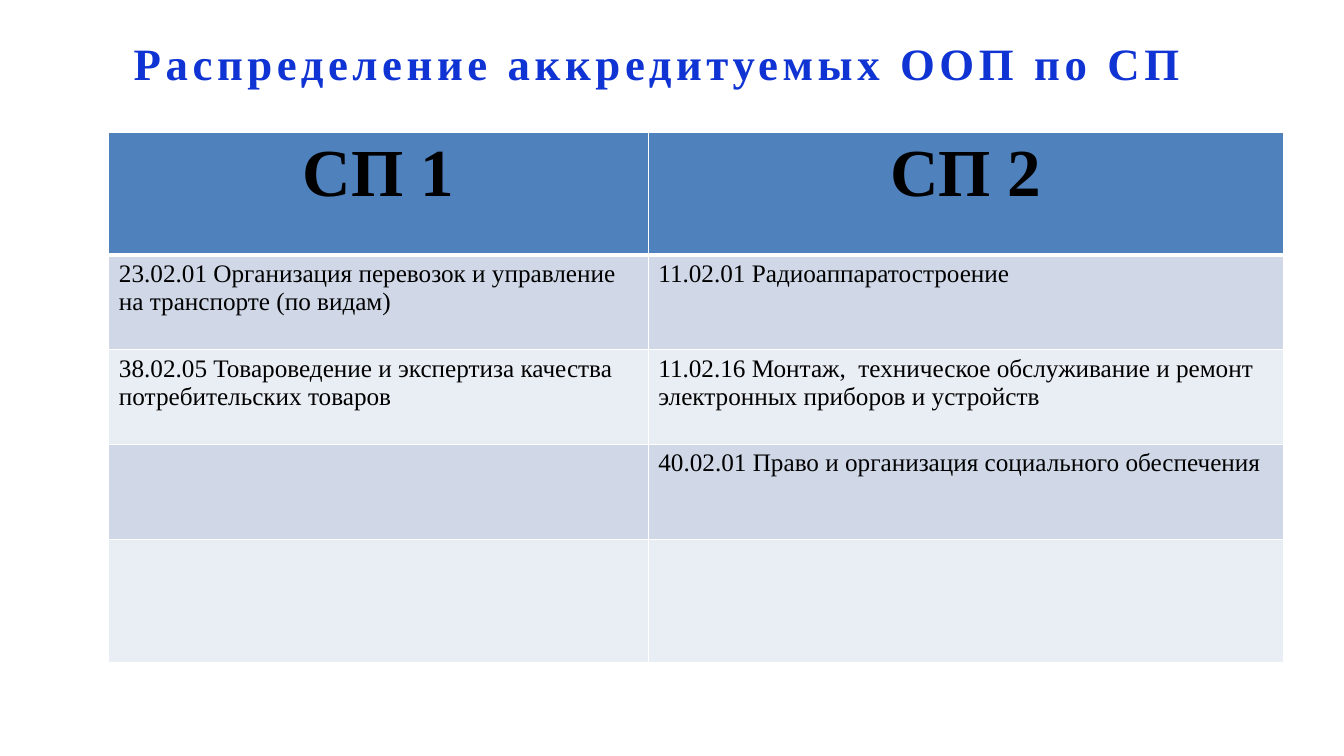
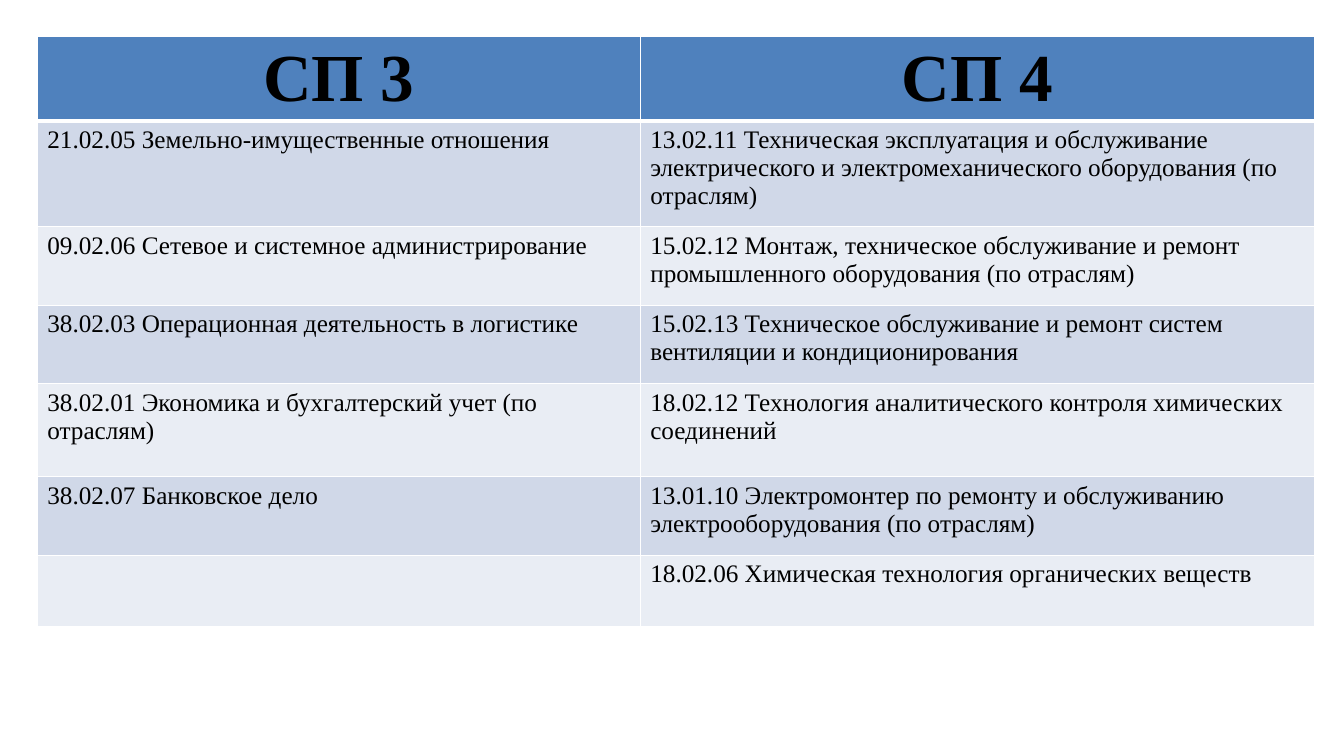
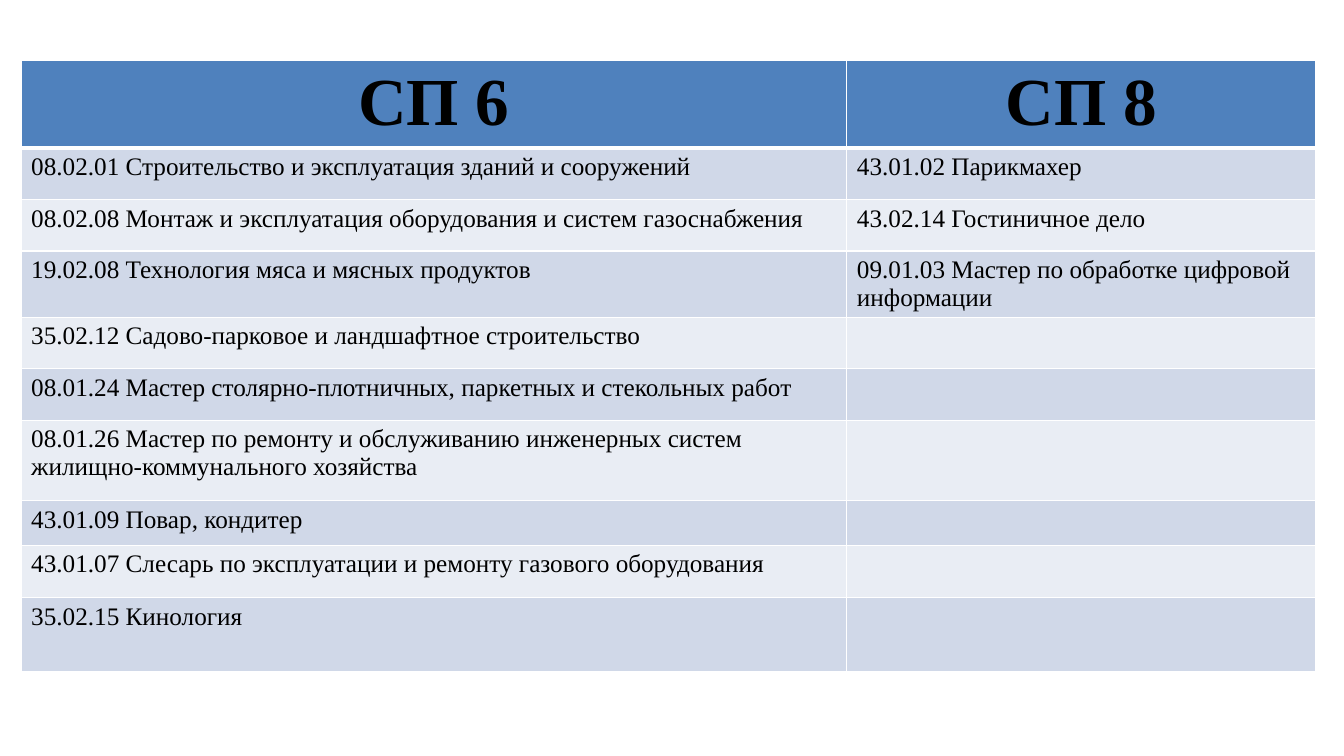
from itertools import zip_longest

from lxml.etree import SubElement
from pptx import Presentation
from pptx.dml.color import RGBColor
from pptx.enum.text import MSO_ANCHOR, MSO_AUTO_SIZE, PP_ALIGN
from pptx.oxml.ns import qn
from pptx.util import Inches, Pt

BLACK = RGBColor(0x00, 0x00, 0x00)
WHITE = RGBColor(0xFF, 0xFF, 0xFF)
TITLE_BLUE = RGBColor(0x0F, 0x34, 0xD3)
HEADER_BLUE = RGBColor(0x4F, 0x81, 0xBD)
BAND_DARK = RGBColor(0xD0, 0xD8, 0xE8)
BAND_LIGHT = RGBColor(0xE9, 0xED, 0xF4)
FONT_NAME = "Times New Roman"
TITLE_ONLY, BLANK = 5, 6

PROGRAM_TABLES = [
    {
        "title": "Распределение аккредитуемых ООП по СП",
        "position": (1.08, 1.31),
        "column_widths": (5.35, 6.3),
        "row_heights": (1.22, 0.94, 0.94, 0.94, 1.22),
        "divisions": {
            "СП 1": [
                "23.02.01 Организация перевозок и управление на транспорте (по видам)",
                "38.02.05 Товароведение и экспертиза качества потребительских товаров",
            ],
            "СП 2": [
                "11.02.01 Радиоаппаратостроение",
                "11.02.16 Монтаж,  техническое обслуживание и ремонт электронных приборов и устройств",
                "40.02.01 Право и организация социального обеспечения",
            ],
        },
    },
    {
        "position": (0.37, 0.36),
        "column_widths": (5.98, 6.69),
        "row_heights": (0.83, 1.05, 0.78, 0.78, 0.92, 0.78, 0.71),
        "divisions": {
            "СП 3": [
                "21.02.05 Земельно-имущественные отношения",
                "09.02.06 Сетевое и системное администрирование",
                "38.02.03 Операционная деятельность в логистике",
                "38.02.01 Экономика и бухгалтерский учет (по отраслям)",
                "38.02.07 Банковское дело",
            ],
            "СП 4": [
                "13.02.11 Техническая эксплуатация и обслуживание электрического "
                "и электромеханического оборудования (по отраслям)",
                "15.02.12 Монтаж, техническое обслуживание и ремонт "
                "промышленного оборудования (по отраслям)",
                "15.02.13 Техническое обслуживание и ремонт систем вентиляции и кондиционирования",
                "18.02.12 Технология аналитического контроля химических соединений",
                "13.01.10 Электромонтер по ремонту и обслуживанию электрооборудования (по отраслям)",
                "18.02.06 Химическая технология органических веществ",
            ],
        },
    },
    {
        "position": (0.21, 0.6),
        "column_widths": (8.19, 4.65),
        "row_heights": (0.87, 0.51, 0.51, 0.66, 0.51, 0.51, 0.8, 0.44, 0.52, 0.73),
        "divisions": {
            "СП 6": [
                "08.02.01 Строительство и эксплуатация зданий и сооружений",
                "08.02.08 Монтаж и эксплуатация оборудования и систем газоснабжения",
                "19.02.08 Технология мяса и мясных продуктов",
                "35.02.12 Садово-парковое и ландшафтное строительство",
                "08.01.24 Мастер столярно-плотничных, паркетных и стекольных работ",
                "08.01.26 Мастер по ремонту и обслуживанию инженерных систем "
                "жилищно-коммунального хозяйства",
                "43.01.09 Повар, кондитер",
                "43.01.07 Слесарь по эксплуатации и ремонту газового оборудования",
                "35.02.15 Кинология",
            ],
            "СП 8": [
                "43.01.02 Парикмахер",
                "43.02.14 Гостиничное дело",
                "09.01.03 Мастер по обработке цифровой информации",
            ],
        },
    },
]


def format_paragraph(paragraph, size, color, bold, alignment):
    paragraph.alignment = alignment
    paragraph.font.name = FONT_NAME
    paragraph.font.size = Pt(size)
    paragraph.font.color.rgb = color
    paragraph.font.bold = bold


def place_title(title, text, left, top, width, height):
    title.left, title.top = Inches(left), Inches(top)
    title.width, title.height = Inches(width), Inches(height)
    frame = title.text_frame
    frame.text = text
    frame.word_wrap = True
    frame.auto_size = MSO_AUTO_SIZE.NONE
    frame.vertical_anchor = MSO_ANCHOR.TOP
    paragraph = frame.paragraphs[0]
    format_paragraph(paragraph, 32, TITLE_BLUE, True, PP_ALIGN.CENTER)
    paragraph.runs[0]._r.get_or_add_rPr().set("spc", "330")


def set_borders(cell, top, bottom):
    properties = cell._tc.get_or_add_tcPr()
    for side, width in (("L", 1), ("R", 1), ("T", top), ("B", bottom)):
        line = SubElement(properties, qn(f"a:ln{side}"), w=str(Pt(width)))
        fill = SubElement(line, qn("a:solidFill"))
        SubElement(fill, qn("a:srgbClr"), val=str(WHITE))


def format_cell(cell, text, row_index):
    is_header = row_index == 0
    set_borders(cell, 3 if row_index == 1 else 1, 3 if is_header else 1)
    cell.fill.solid()
    if is_header:
        cell.fill.fore_color.rgb = HEADER_BLUE
    else:
        cell.fill.fore_color.rgb = BAND_DARK if row_index % 2 else BAND_LIGHT
    if text:
        cell.text = text
        format_paragraph(
            cell.text_frame.paragraphs[0],
            48 if is_header else 18,
            BLACK,
            is_header,
            PP_ALIGN.CENTER if is_header else PP_ALIGN.LEFT,
        )


def add_program_table(slide, position, column_widths, row_heights, divisions):
    left, top = position
    table = slide.shapes.add_table(
        len(row_heights),
        len(column_widths),
        Inches(left),
        Inches(top),
        Inches(sum(column_widths)),
        Inches(sum(row_heights)),
    ).table
    table.first_row = False
    table.horz_banding = False
    for column, width in zip(table.columns, column_widths):
        column.width = Inches(width)
    for row, height in zip(table.rows, row_heights):
        row.height = Inches(height)
    for column_index, (division, programs) in enumerate(divisions.items()):
        texts = [division, *programs]
        for row_index, (text, _) in enumerate(zip_longest(texts, row_heights)):
            format_cell(table.cell(row_index, column_index), text, row_index)


def add_program_slide(presentation, position, column_widths, row_heights, divisions, title=None):
    layout = presentation.slide_layouts[TITLE_ONLY if title else BLANK]
    slide = presentation.slides.add_slide(layout)
    if title:
        place_title(slide.shapes.title, title, 0.52, 0.3, 12, 1)
    add_program_table(slide, position, column_widths, row_heights, divisions)


def main():
    presentation = Presentation()
    presentation.slide_width = Inches(13.33)
    presentation.slide_height = Inches(7.5)
    for program_table in PROGRAM_TABLES:
        add_program_slide(presentation, **program_table)
    presentation.save("out.pptx")


if __name__ == "__main__":
    main()
